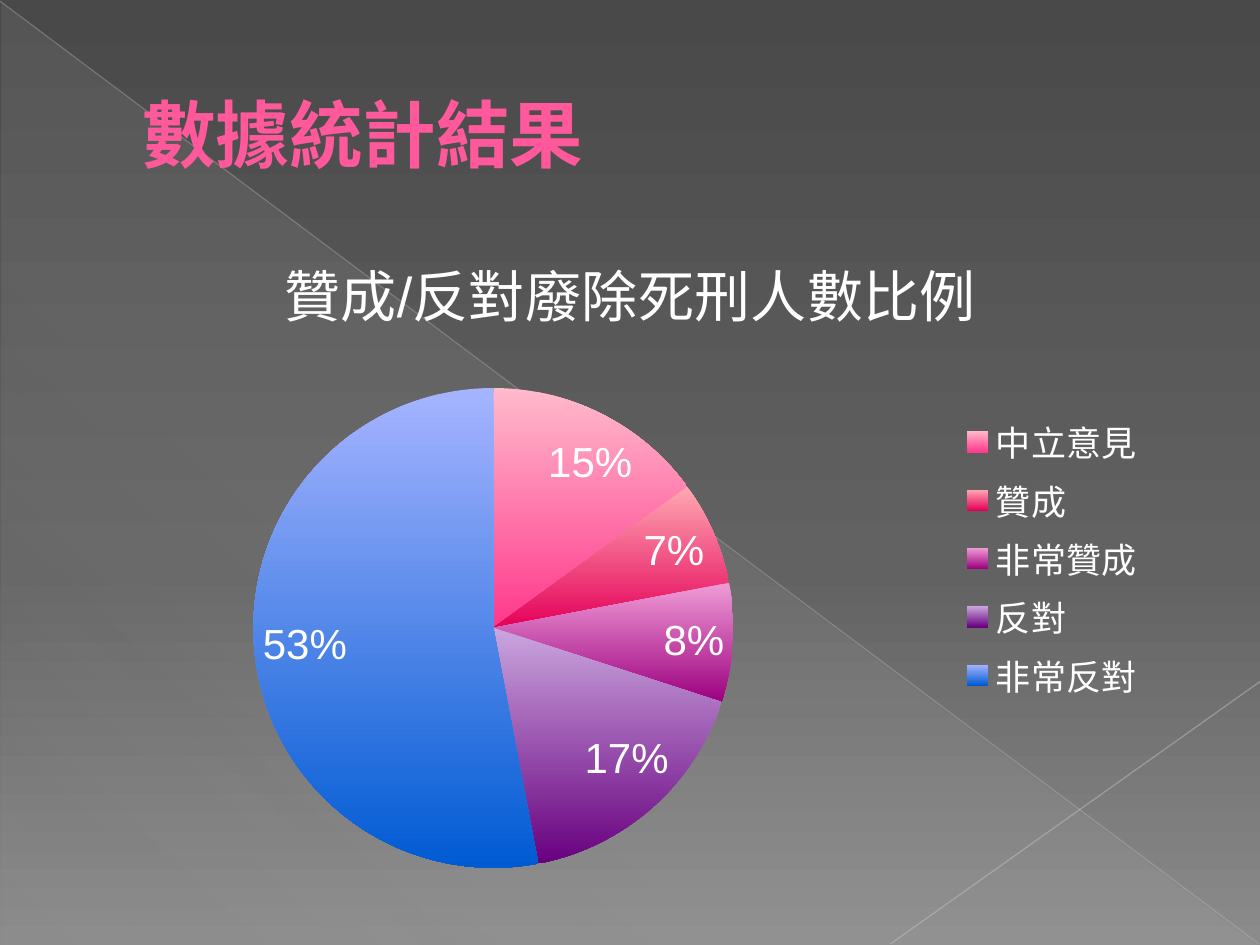
from lxml import etree
from pptx import Presentation
from pptx.chart.data import CategoryChartData
from pptx.dml.color import RGBColor
from pptx.enum import chart as charts, shapes, text
from pptx.oxml import ns
from pptx.util import Pt

COLORS = {
    "white": "FFFFFF", "title": "FF599C", "veil": "D2D2D2",
    "long line": "BEBEBE", "short line": "C5C5C5",
    "top": "494949", "middle": "626262", "bottom": "8B8B8B",
}
# Category, value, light colour, dark colour
SLICES = [
    ("中立意見", 15, "FFBACC", "FF388C"),
    ("贊成", 7, "FFA8B2", "E40059"),
    ("非常贊成", 8, "F09CD6", "9C007F"),
    ("反對", 17, "CAA6DE", "68007F"),
    ("非常反對", 53, "A6B4FF", "005BD3"),
]


def paint_gradient(fill, root, stops, angle):
    """Fill with stops of (position %, colour, opacity %), angle clockwise."""
    fill.gradient()
    gradient = root.findall(".//" + ns.qn("a:gradFill"))[-1]
    for child in list(gradient):
        gradient.remove(child)
    stop_list = etree.SubElement(gradient, ns.qn("a:gsLst"))
    for position, color, opacity in stops:
        stop = etree.SubElement(stop_list, ns.qn("a:gs"), pos=str(position * 1000))
        rgb = etree.SubElement(stop, ns.qn("a:srgbClr"), val=color)
        if opacity < 100:
            etree.SubElement(rgb, ns.qn("a:alpha"), val=str(opacity * 1000))
    etree.SubElement(gradient, ns.qn("a:lin"), ang=str(angle * 60000), scaled="0")


def place(parent, *box):
    """Give a chart part a fixed box, as fractions of the chart."""
    layout = parent.find(ns.qn("c:layout"))
    if layout is None:
        layout = etree.Element(ns.qn("c:layout"))
        position = parent.find(ns.qn("c:legendPos"))
        if position is None:
            parent.insert(0, layout)
        else:
            position.addnext(layout)
    manual = etree.SubElement(layout, ns.qn("c:manualLayout"))
    if parent.tag == ns.qn("c:plotArea"):
        etree.SubElement(manual, ns.qn("c:layoutTarget"), val="inner")
    for name in ("xMode", "yMode"):
        etree.SubElement(manual, ns.qn("c:" + name), val="edge")
    for name, value in zip("xywh", box):
        etree.SubElement(manual, ns.qn("c:" + name), val=str(value))


presentation = Presentation()
presentation.slide_width, presentation.slide_height = Pt(720), Pt(540)
slide = presentation.slides.add_slide(presentation.slide_layouts[5])
white = RGBColor.from_string(COLORS["white"])

# Background
paint_gradient(slide.background.fill, slide.element,
               [(0, COLORS["top"], 100), (60, COLORS["middle"], 100),
                (100, COLORS["bottom"], 100)], 90)

# Pale triangle and crossing lines
triangle = slide.shapes.add_shape(shapes.MSO_SHAPE.RIGHT_TRIANGLE,
                                  Pt(0.7), Pt(1.4), Pt(718.6), Pt(538.6))
triangle.shadow.inherit = False
triangle.line.fill.background()
paint_gradient(triangle.fill, triangle.element,
               [(0, COLORS["veil"], 10), (70, COLORS["veil"], 8),
                (100, COLORS["veil"], 1)], 133)

for name, opacity, ends in [("long line", 35, (0, 0.7, 719.3, 539.3)),
                            ("short line", 45, (720, 389.5, 509, 539.3))]:
    line = slide.shapes.add_connector(shapes.MSO_CONNECTOR.STRAIGHT,
                                      *[Pt(value) for value in ends])
    line.line.width = Pt(0.75)
    line.line.color.rgb = RGBColor.from_string(COLORS[name])
    properties = line.element.spPr
    rgb = properties.find(".//" + ns.qn("a:srgbClr"))
    etree.SubElement(rgb, ns.qn("a:alpha"), val=str(opacity * 1000))
    etree.SubElement(properties, ns.qn("a:effectLst"))

# Title, in front of the decoration
title = slide.shapes.title
triangle.element.getparent().append(title.element)
title.left, title.top, title.width, title.height = Pt(36), Pt(21), Pt(648), Pt(110)
frame = title.text_frame
frame.vertical_anchor = text.MSO_ANCHOR.MIDDLE
frame.margin_left = frame.margin_right = frame.margin_top = frame.margin_bottom = Pt(7.2)
paragraph = frame.paragraphs[0]
paragraph.alignment = text.PP_ALIGN.LEFT
indent = title.element.find(".//" + ns.qn("a:pPr"))
indent.set("marL", str(Pt(38)))
indent.set("indent", "0")
run = paragraph.add_run()
run.text = "數據統計結果"
run.font.name = "TeX Gyre Adventor"
run.font.size = Pt(42)
run.font.bold = True
run.font.color.rgb = RGBColor.from_string(COLORS["title"])

# Pie chart
data = CategoryChartData()
data.categories = [category for category, *rest in SLICES]
data.add_series("Series 1", [value for category, value, *rest in SLICES])
chart = slide.shapes.add_chart(charts.XL_CHART_TYPE.PIE, Pt(59), Pt(122.4),
                               Pt(602.6), Pt(397.4), data).chart
chart.font.name = "Arial"
chart.font.size = Pt(18)

chart.has_title = True
run = chart.chart_title.text_frame.paragraphs[0].add_run()
run.text = "贊成/反對廢除死刑人數比例"
run.font.size = Pt(32)
run.font.bold = False
run.font.color.rgb = white

chart.has_legend = True
legend = chart.legend
legend.position = charts.XL_LEGEND_POSITION.RIGHT
legend.include_in_layout = False
legend.font.size = Pt(20)
legend.font.color.rgb = white

# Slices and percentages
plot = chart.plots[0]
plot.vary_by_categories = True
for index, (category, value, light, dark) in enumerate(SLICES):
    point = plot.series[0].points[index]
    paint_gradient(point.format.fill, chart.element,
                   [(0, light, 100), (100, dark, 100)], 90)
    point.format.line.fill.background()

labels = plot.series[0].data_labels
labels.show_percentage = True
labels.show_value = False
labels.number_format = "0%"
labels.number_format_is_linked = False
labels.position = charts.XL_LABEL_POSITION.BEST_FIT
labels.font.size = Pt(24)
labels.font.color.rgb = white

# Places inside the chart
for tag, box in [("c:plotArea", (0.14, 0.25, 0.46, 0.69)),
                 ("c:legend", (0.81, 0.28, 0.18, 0.43))]:
    place(chart.element.find(".//" + ns.qn(tag)), *box)

presentation.save("out.pptx")
